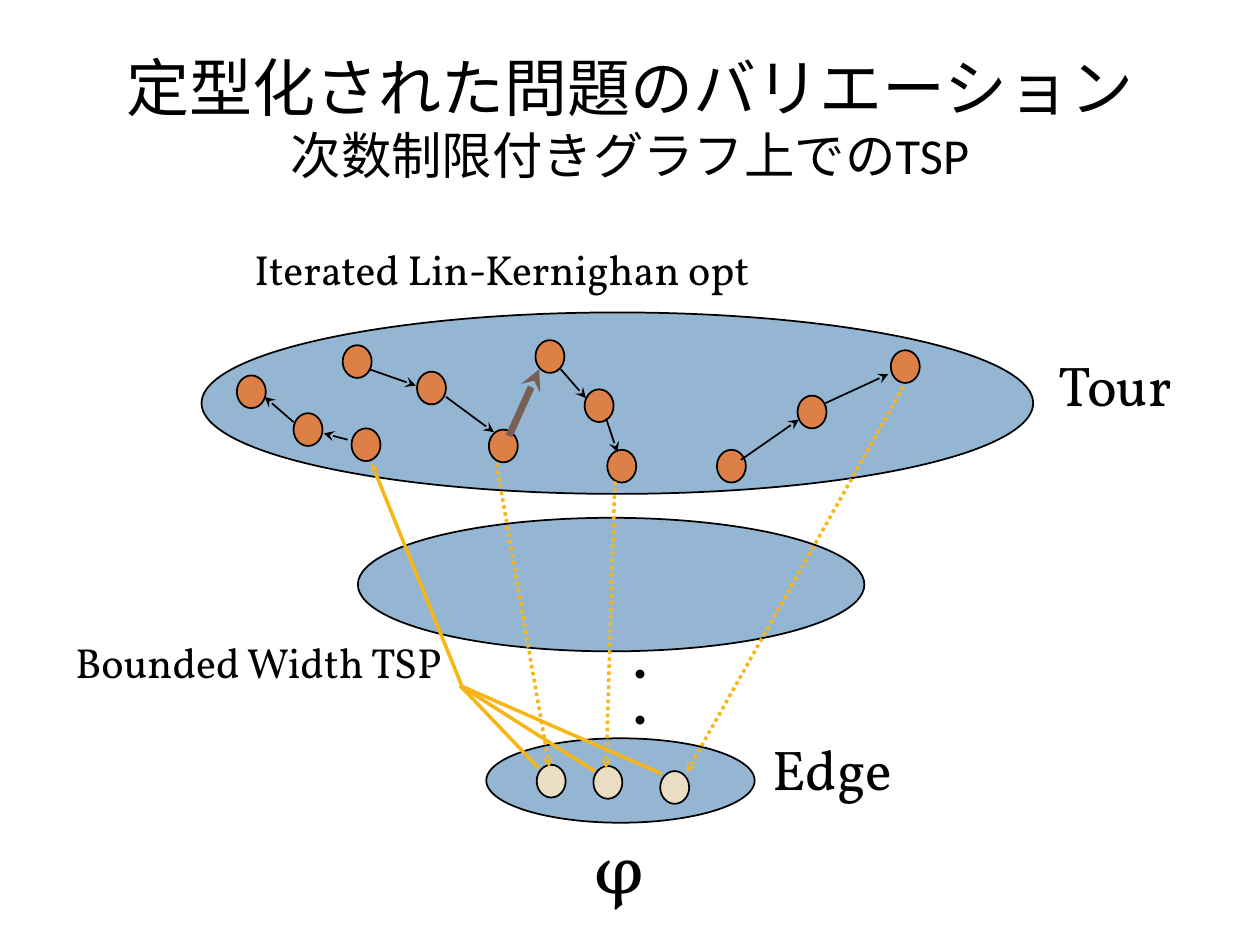
from dataclasses import dataclass

from lxml import etree
from pptx import Presentation
from pptx.dml.color import RGBColor
from pptx.enum.dml import MSO_LINE
from pptx.enum.shapes import MSO_CONNECTOR, MSO_SHAPE
from pptx.enum.text import MSO_ANCHOR, PP_ALIGN
from pptx.oxml.ns import qn
from pptx.util import Inches, Pt

OVAL = MSO_SHAPE.OVAL
STRAIGHT = MSO_CONNECTOR.STRAIGHT
DOTTED = MSO_LINE.ROUND_DOT
MIDDLE = MSO_ANCHOR.MIDDLE
CENTER, LEFT = PP_ALIGN.CENTER, PP_ALIGN.LEFT


@dataclass(frozen=True)
class Theme:
    """Colours, fonts and type sizes of the slide."""
    ink: str = "000000"
    layer: str = "94B6D2"
    city: str = "DD8047"
    edge_city: str = "EBDDC3"
    bridge: str = "775F55"
    link: str = "F7B615"
    title_font: str = "Calibri"
    body_font: str = "Vollkorn"
    title: float = 36
    subtitle: float = 28.8
    symbol: float = 40
    name: float = 32
    note: float = 24


T = Theme()
NODE_SIZE = (0.23, 0.26)


def add_run(p, text, size, font):
    """Append a run of black text to a paragraph."""
    r = p.add_run()
    r.text = text
    for key, value in {"size": Pt(size), "name": font}.items():
        setattr(r.font, key, value)
    r.font.color.rgb = RGBColor.from_string(T.ink)


def add_label(s, box, text, size):
    """Place a one-line label in the box."""
    tf = s.shapes.add_textbox(*map(Inches, box)).text_frame
    tf.word_wrap = False
    p = tf.paragraphs[0]
    p.alignment = LEFT
    add_run(p, text, size, T.body_font)


def add_oval(s, box, fill):
    """Draw an outlined oval that fills the box."""
    sp = s.shapes.add_shape(OVAL, *map(Inches, box))
    sp.shadow.inherit = False
    sp.fill.solid()
    sp.fill.fore_color.rgb = RGBColor.from_string(fill)
    sp.line.color.rgb = RGBColor.from_string(T.ink)
    sp.line.width = Pt(1)


def add_line(s, box, ends, color, width=1, dash=None, arrow=True):
    """Draw a line whose ends are offsets from the box's corner."""
    x, y = box[:2]
    x1, y1, x2, y2 = ends
    points = (x + x1, y + y1, x + x2, y + y2)
    cn = s.shapes.add_connector(STRAIGHT, *map(Inches, points))
    cn.line.color.rgb = RGBColor.from_string(color)
    cn.line.width = Pt(width)
    if dash:
        cn.line.dash_style = dash
    if arrow:
        etree.SubElement(cn.line._get_or_add_ln(), qn("a:tailEnd"), type="stealth")
    etree.SubElement(cn._element.spPr, qn("a:effectLst"))


def add_layer(s, box, cities=(), color=T.city):
    """Draw one graph layer with its cities."""
    add_oval(s, box, T.layer)
    for dx, dy in cities:
        add_oval(s, (box[0] + dx, box[1] + dy, *NODE_SIZE), color)


def add_title(s, box):
    """Place the two-line centred title."""
    tf = s.shapes.add_textbox(*map(Inches, box)).text_frame
    for key, value in {"word_wrap": True, "vertical_anchor": MIDDLE}.items():
        setattr(tf, key, value)
    p = tf.paragraphs[0]
    p.alignment = CENTER
    add_run(p, "定型化された問題のバリエーション", T.title, T.title_font)
    p.add_line_break()
    add_run(p, "次数制限付きグラフ上でのTSP", T.subtitle, T.title_font)


def add_tour(s, box):
    """Draw the top layer with its partial tours and captions."""
    x, y, w, _ = box
    cities = [(0.28, 0.5), (0.73, 0.8), (1.19, 0.92), (1.12, 0.26),
              (1.71, 0.47), (2.28, 0.93), (2.65, 0.22), (3.04, 0.61),
              (3.22, 1.09), (4.09, 1.09), (4.73, 0.66), (5.47, 0.3)]
    steps = [(1.16, 1.01, 0.97, 0.96), (0.73, 0.87, 0.5, 0.67),
             (1.33, 0.45, 1.7, 0.58), (1.94, 0.67, 2.32, 0.95),
             (2.85, 0.45, 3.05, 0.68), (3.21, 0.84, 3.3, 1.11),
             (4.28, 1.17, 4.74, 0.85), (4.95, 0.72, 5.45, 0.49)]
    add_layer(s, box, cities)
    for ends in steps:
        add_line(s, box, ends, T.ink)
    add_line(s, box, (2.44, 0.98, 2.68, 0.45), T.bridge, 4)
    add_label(s, (x + 0.32, y - 0.6, 4.18, 0.51), "Iterated Lin-Kernighan opt", T.note)
    add_label(s, (x + w + 0.1, y + 0.25, 1.16, 0.63), "Tour", T.name)


def add_edge(s, box):
    """Draw the bottom layer with its cities and captions."""
    x, y, w, h = box
    add_layer(s, box, [(0.4, 0.21), (0.85, 0.22), (1.38, 0.26)], T.edge_city)
    add_label(s, (x + w + 0.04, y - 0.08, 1.2, 0.63), "Edge", T.name)
    add_label(s, (x + 0.76, y + h - 0.04, 0.76, 0.77), "φ", T.symbol)
    for rise in (0.76, 0.4):
        add_label(s, (x + 0.96, y - rise, 0.4, 0.5), "・", T.note)


def add_links(s, box):
    """Draw the links between the top and bottom layers."""
    hub = (0.7, 2.37)
    for ends in [(0.99, 0.61, 1.41, 3.02), (1.93, 0.75, 1.86, 3.03),
                 (4.22, 0, 2.5, 3.06)]:
        add_line(s, box, ends, T.link, 2, DOTTED)
    for end in [(1.33, 3.03), (1.77, 3.05), (2.3, 3.07)]:
        add_line(s, box, (*hub, *end), T.link, 2, arrow=False)
    add_line(s, box, (0.73, 2.41, 0, 0.61), T.link, 2)
    add_label(s, (box[0] - 2.45, box[1] + 1.93, 3.23, 0.5), "Bounded Width TSP", T.note)


def main():
    """Build the slide and save it."""
    prs = Presentation()
    prs.slide_width, prs.slide_height = Inches(10), Inches(7.5)
    s = prs.slides.add_slide(prs.slide_layouts[6])
    add_title(s, (0.5, 0.3, 9, 1.25))
    add_edge(s, (3.86, 5.86, 2.13, 0.67))
    add_tour(s, (1.6, 2.48, 6.6, 1.44))
    add_layer(s, (2.84, 4.11, 4.02, 1.06))
    add_links(s, (2.95, 3.07, 4.22, 3.06))
    prs.save("out.pptx")


if __name__ == "__main__":
    main()
